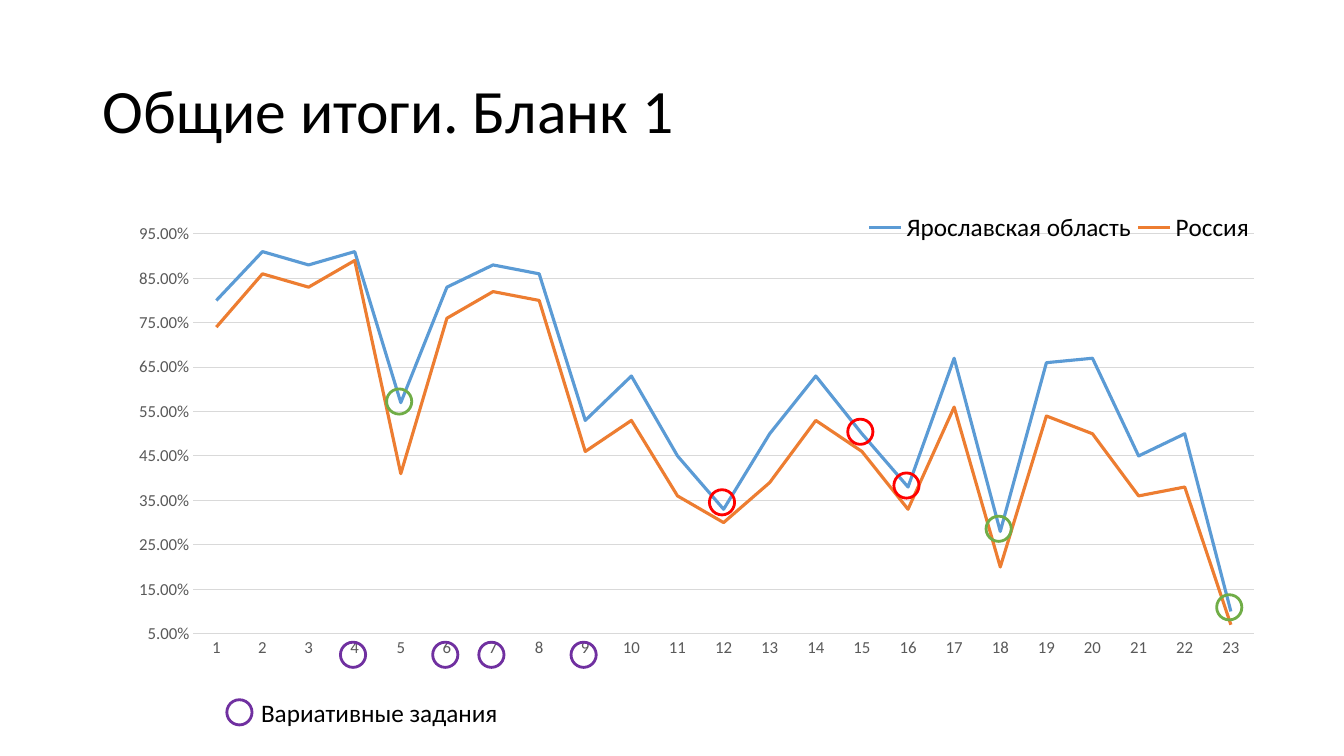
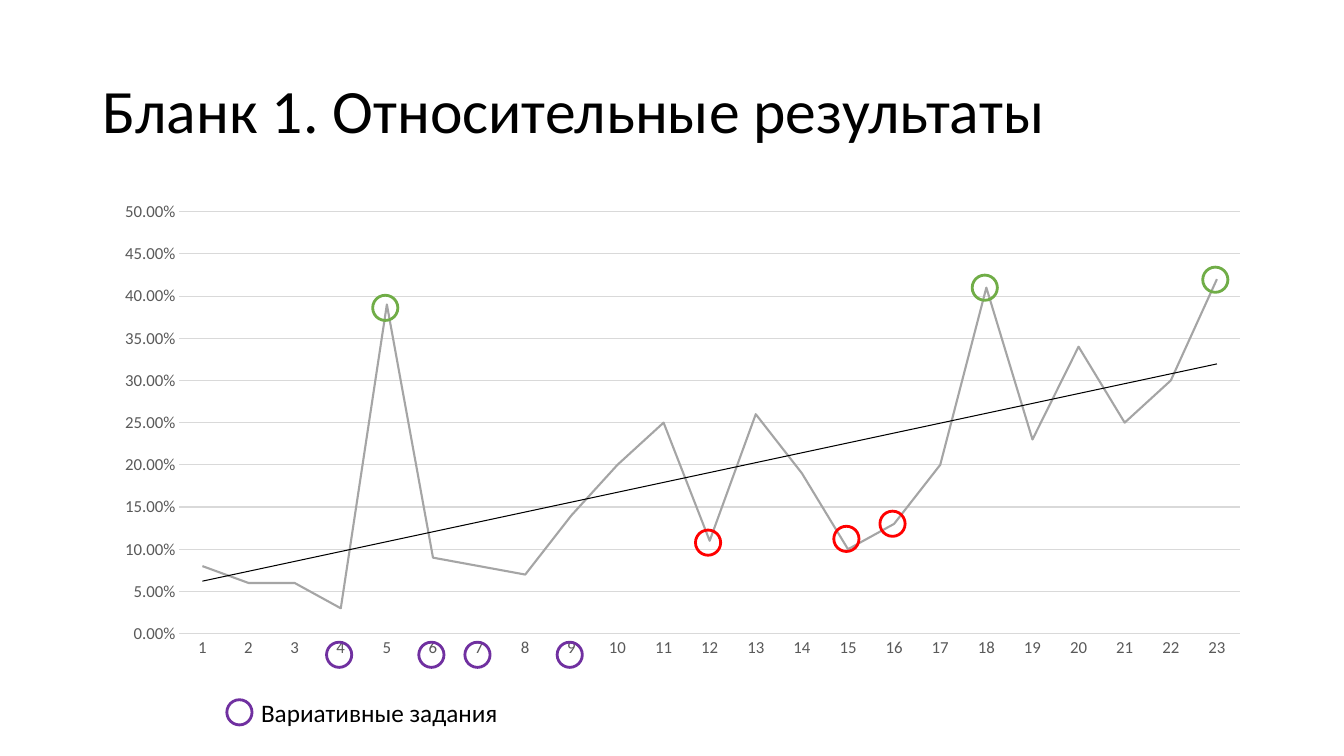
from dataclasses import dataclass

from lxml.etree import SubElement
from pptx import Presentation
from pptx.chart.data import CategoryChartData
from pptx.dml.color import RGBColor
from pptx.enum.chart import XL_CHART_TYPE, XL_LEGEND_POSITION, XL_TICK_MARK
from pptx.enum.shapes import MSO_SHAPE
from pptx.enum.text import MSO_ANCHOR, MSO_AUTO_SIZE, PP_ALIGN
from pptx.oxml import parse_xml
from pptx.oxml.ns import nsdecls, qn
from pptx.util import Emu, Inches, Pt

COLUMNS, ROWS = 32, 18


@dataclass(frozen=True)
class Theme:
    font: str = "Calibri"
    title_size: int = 44
    label_size: int = 18
    axis_size: int = 12
    chart_size: int = 10
    text: str = "000000"
    axis_text: str = "595959"
    grid: str = "D9D9D9"
    region: str = "5B9BD5"
    country: str = "ED7D31"
    difference: str = "A5A5A5"
    variable: str = "7030A0"
    weak: str = "FF0000"
    strong: str = "70AD47"
    ring_width: float = 2
    grid_width: float = 0.75


# Positions in grid cells; plot areas in percent of the chart
TITLE_BOX = (2.2, 0.96, 27.6, 3.48)
CHART_BOX = (2.45, 4.8, 27.6, 11.42)
LABEL_BOX = (5.98, 16.49, 6.17, 0.96)
LABEL_RING = (5.7, 16.96)
RING_SIZE = 0.6
RING_NUDGE = -0.04
TASK_ROW = 15.59
PLOT_TOP, PLOT_WIDTH, PLOT_HEIGHT = 2.1, 91.5, 88
LEGEND_AREA = (65.5, 1, 34, 9)

TASKS = range(1, 24)
VARIABLE_TASKS = (4, 6, 7, 9)


class Deck:
    """Holds the style and the slide being built."""

    def __init__(self, theme):
        self.theme = theme
        self.presentation = Presentation()
        self.presentation.slide_width = Inches(13.33)
        self.presentation.slide_height = Inches(7.5)
        self.column = self.presentation.slide_width / COLUMNS
        self.row = self.presentation.slide_height / ROWS
        self.slide = None

    def box(self, left, top, width, height):
        return (Emu(round(left * self.column)), Emu(round(top * self.row)),
                Emu(round(width * self.column)), Emu(round(height * self.row)))

    def style_font(self, font, size, color):
        font.name = self.theme.font
        font.size = Pt(size)
        font.color.rgb = RGBColor.from_string(color)

    @staticmethod
    def style_line(line, color, width):
        line.color.rgb = RGBColor.from_string(color)
        line.width = Pt(width)

    def add_slide(self, title):
        layout = self.presentation.slide_layouts[5]
        self.slide = self.presentation.slides.add_slide(layout)
        shape = self.slide.shapes.title
        shape.left, shape.top, shape.width, shape.height = self.box(*TITLE_BOX)
        frame = shape.text_frame
        frame.text = title
        frame.auto_size = MSO_AUTO_SIZE.NONE
        frame.vertical_anchor = MSO_ANCHOR.MIDDLE
        paragraph = frame.paragraphs[0]
        paragraph.alignment = PP_ALIGN.LEFT
        paragraph.line_spacing = 0.9
        self.style_font(paragraph.runs[0].font, self.theme.title_size, self.theme.text)

    def add_ring(self, center_x, center_y, color):
        half = RING_SIZE / 2
        ring = self.slide.shapes.add_shape(
            MSO_SHAPE.OVAL,
            *self.box(center_x - half, center_y - half, RING_SIZE, RING_SIZE))
        ring.shadow.inherit = False
        ring.fill.background()
        self.style_line(ring.line, color, self.theme.ring_width)

    def add_task_rings(self, heights, color, plot_left):
        """Circle tasks: the column follows the axis, the height is given."""
        chart_left, _, chart_width, _ = CHART_BOX
        start = chart_left + chart_width * plot_left / 100 + RING_NUDGE
        step = chart_width * PLOT_WIDTH / 100 / len(TASKS)
        for task, height in heights.items():
            self.add_ring(start + (task - 0.5) * step, height, color)

    def add_variable_key(self):
        frame = self.slide.shapes.add_textbox(*self.box(*LABEL_BOX)).text_frame
        frame.word_wrap = False
        frame.text = "Вариативные задания"
        self.style_font(frame.paragraphs[0].runs[0].font,
                        self.theme.label_size, self.theme.text)
        self.add_ring(*LABEL_RING, self.theme.variable)

    @staticmethod
    def set_layout(parent, position, area, inner=False):
        """Place a chart part by percent of the chart's size."""
        for old in parent.findall(qn("c:layout")):
            parent.remove(old)
        layout = parse_xml(f"<c:layout {nsdecls('c')}><c:manualLayout/></c:layout>")
        manual = layout[0]
        settings = [("layoutTarget", "inner")] if inner else []
        settings += [("xMode", "edge"), ("yMode", "edge")]
        settings += zip("xywh", (share / 100 for share in area))
        for name, value in settings:
            SubElement(manual, qn(f"c:{name}")).set("val", str(value))
        parent.insert(position, layout)

    def style_axis(self, axis):
        axis.major_tick_mark = axis.minor_tick_mark = XL_TICK_MARK.NONE
        self.style_font(axis.tick_labels.font, self.theme.axis_size, self.theme.axis_text)

    def add_line_chart(self, series, scale, plot_left, line_width):
        """Draw series given as (name, colour, values); scale is low, high, step."""
        data = CategoryChartData(number_format="0.00%")
        data.categories = [str(task) for task in TASKS]
        for name, _, values in series:
            data.add_series(name, values)
        chart = self.slide.shapes.add_chart(
            XL_CHART_TYPE.LINE, *self.box(*CHART_BOX), data).chart
        chart.has_title = False
        chart.has_legend = False
        self.style_font(chart.font, self.theme.chart_size, self.theme.text)

        # Axes and grid
        value_axis, category_axis = chart.value_axis, chart.category_axis
        for axis in (value_axis, category_axis):
            self.style_axis(axis)
        value_axis.minimum_scale, value_axis.maximum_scale, value_axis.major_unit = scale
        value_axis.tick_labels.number_format = "0.00%"
        value_axis.tick_labels.number_format_is_linked = False
        value_axis.format.line.fill.background()
        for line in (value_axis.major_gridlines.format.line, category_axis.format.line):
            self.style_line(line, self.theme.grid, self.theme.grid_width)

        # Series
        plot = chart.plots[0]
        plot.vary_by_categories = False
        for drawn, (_, color, _) in zip(plot.series, series):
            drawn.smooth = False
            self.style_line(drawn.format.line, color, line_width)
        self.set_layout(chart.element.find(".//" + qn("c:plotArea")), 0,
                        (plot_left, PLOT_TOP, PLOT_WIDTH, PLOT_HEIGHT), inner=True)
        return chart

    def add_legend(self, chart):
        chart.has_legend = True
        legend = chart.legend
        legend.position = XL_LEGEND_POSITION.TOP
        legend.include_in_layout = True
        self.style_font(legend.font, self.theme.label_size, self.theme.text)
        self.set_layout(chart.element.find(".//" + qn("c:legend")), 1, LEGEND_AREA)

    def add_trend_line(self, chart):
        trend = parse_xml(
            f"<c:trendline {nsdecls('c', 'a')}><c:spPr><a:ln><a:solidFill>"
            f'<a:srgbClr val="{self.theme.text}"/></a:solidFill></a:ln></c:spPr>'
            '<c:trendlineType val="linear"/><c:dispRSqr val="0"/>'
            '<c:dispEq val="0"/></c:trendline>')
        chart.element.find(".//" + qn("c:cat")).addprevious(trend)

    def add_marks(self, plot_left, weak, strong):
        """Add the key and the three groups of circled tasks."""
        self.add_variable_key()
        variable = dict.fromkeys(VARIABLE_TASKS, TASK_ROW)
        for heights, color in ((variable, self.theme.variable),
                               (weak, self.theme.weak), (strong, self.theme.strong)):
            self.add_task_rings(heights, color, plot_left)


REGION = (0.8, 0.91, 0.88, 0.91, 0.57, 0.83, 0.88, 0.86, 0.53, 0.63, 0.45, 0.33,
          0.5, 0.63, 0.5, 0.38, 0.67, 0.28, 0.66, 0.67, 0.45, 0.5, 0.1)
COUNTRY = (0.74, 0.86, 0.83, 0.89, 0.41, 0.76, 0.82, 0.8, 0.46, 0.53, 0.36, 0.3,
           0.39, 0.53, 0.46, 0.33, 0.56, 0.2, 0.54, 0.5, 0.36, 0.38, 0.07)
DIFFERENCE = (0.08, 0.06, 0.06, 0.03, 0.39, 0.09, 0.08, 0.07, 0.14, 0.2, 0.25, 0.11,
              0.26, 0.19, 0.1, 0.13, 0.2, 0.41, 0.23, 0.34, 0.25, 0.3, 0.42)


def main():
    theme = Theme()
    deck = Deck(theme)

    # Overall results
    plot_left = 7.8
    deck.add_slide("Общие итоги. Бланк 1")
    chart = deck.add_line_chart(
        [("Ярославская область", theme.region, REGION),
         ("Россия", theme.country, COUNTRY)],
        (0.05, 1, 0.1), plot_left, line_width=2.25)
    deck.add_legend(chart)
    deck.add_marks(plot_left, weak={12: 11.96, 15: 10.28, 16: 11.56},
                   strong={5: 9.56, 18: 12.59, 23: 14.46})

    # Relative results
    plot_left = 6.6
    deck.add_slide("Бланк 1. Относительные результаты")
    chart = deck.add_line_chart(
        [("Series 1", theme.difference, DIFFERENCE)],
        (0, 0.5, 0.05), plot_left, line_width=1.5)
    deck.add_trend_line(chart)
    deck.add_marks(plot_left, weak={12: 12.92, 15: 12.83, 16: 12.47},
                   strong={5: 7.33, 18: 6.85, 23: 6.66})

    deck.presentation.save("out.pptx")


if __name__ == "__main__":
    main()
